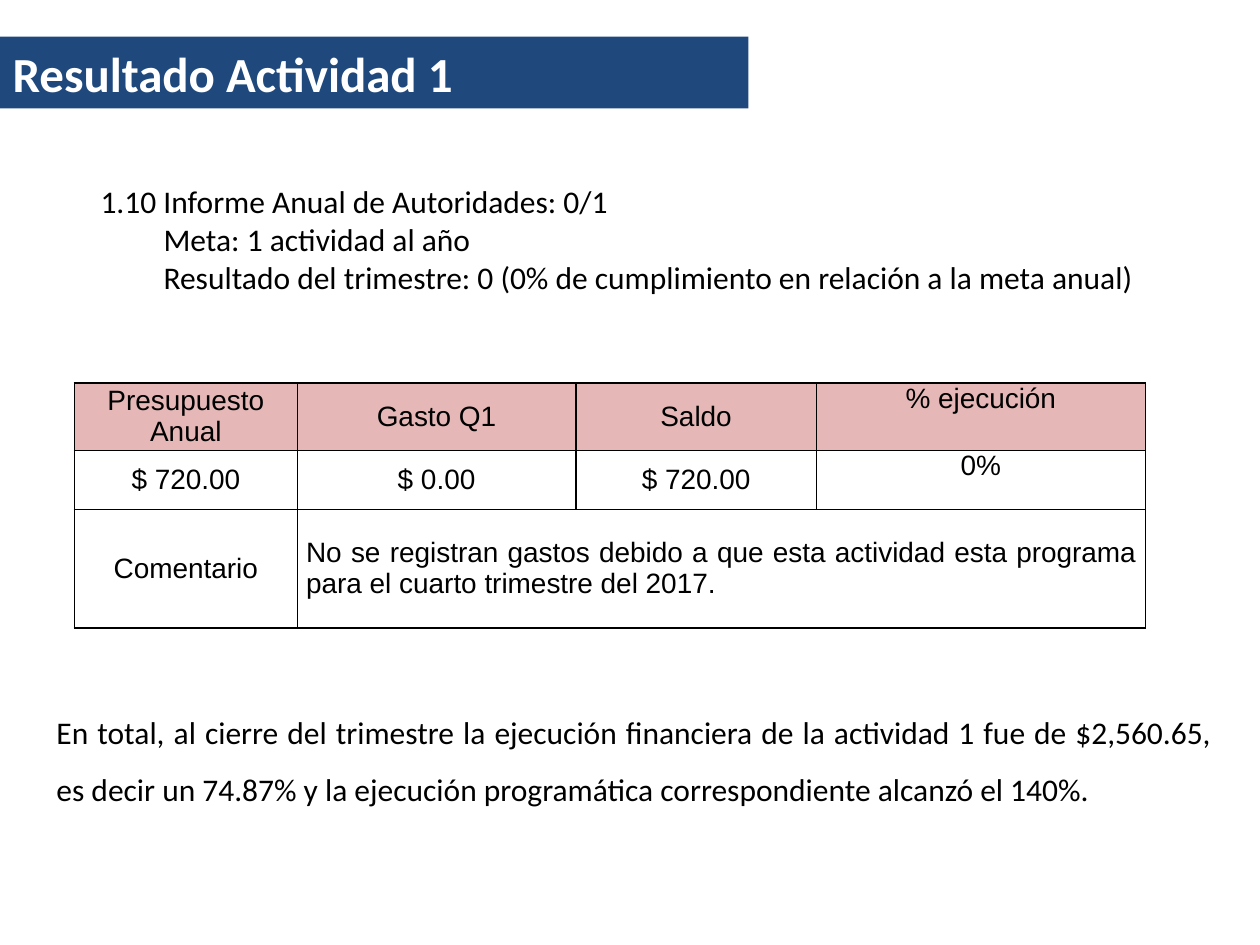
from lxml.etree import SubElement
from pptx import Presentation
from pptx.dml.color import RGBColor
from pptx.enum.text import MSO_ANCHOR as Anchor, MSO_AUTO_SIZE as AutoSize, PP_ALIGN as Align
from pptx.oxml.ns import qn
from pptx.util import Inches, Pt

COLORS = {"banner": "1F497D", "header": "E5B8B7", "ink": "000000", "paper": "FFFFFF"}


def write(frame, text, size=18, font="Calibri", color="ink", bold=False,
          align=Align.LEFT, anchor=Anchor.MIDDLE, spacing=1.0, indents=()):
    frame.word_wrap = True
    frame.vertical_anchor = anchor
    frame.text = text
    for paragraph in frame.paragraphs:
        paragraph.alignment = align
        paragraph.line_spacing = spacing
        for run in paragraph.runs:
            run.font.size = Pt(size)
            run.font.name = font
            run.font.bold = bold
            run.font.color.rgb = RGBColor.from_string(COLORS[color])
    for paragraph, indent in zip(frame.paragraphs, indents):
        properties = paragraph._p.get_or_add_pPr()
        properties.set("marL", str(Inches(indent)))
        properties.set("indent", "0")


deck = Presentation()
deck.slide_width, deck.slide_height = Inches(10), Inches(7.5)
slide = deck.slides.add_slide(deck.slide_layouts[5])

banner = slide.shapes.title
banner.left, banner.top = 0, Inches(0.29)
banner.width, banner.height = Inches(5.94), Inches(0.57)
banner.fill.solid()
banner.fill.fore_color.rgb = RGBColor.from_string(COLORS["banner"])
write(banner.text_frame, "Resultado Actividad 1", size=28, color="paper", bold=True)
banner.text_frame.auto_size = AutoSize.NONE

goal = slide.shapes.add_textbox(Inches(0.2), Inches(1.39), Inches(9.37), Inches(1.01))
write(goal.text_frame,
      "1.10 Informe Anual de Autoridades: 0/1\n"
      "Meta: 1 actividad al año\n"
      "Resultado del trimestre: 0 (0% de cumplimiento en relación a la meta anual)",
      indents=(0.5, 1, 1))

column_widths = [1.77, 2.21, 1.91, 2.61]
row_heights = [0.47, 0.47, 0.94]
budget_rows = [
    ["Presupuesto Anual", "Gasto Q1", "Saldo", "% ejecución"],
    ["$ 720.00", "$ 0.00", "$ 720.00", "0%"],
    ["Comentario", "No se registran gastos debido a que esta actividad esta programa "
     "para el cuarto trimestre del 2017.", "", ""],
]
budget = slide.shapes.add_table(
    len(row_heights), len(column_widths), Inches(0.59), Inches(3.04),
    Inches(sum(column_widths)), Inches(sum(row_heights))).table
for column, width in zip(budget.columns, column_widths):
    column.width = Inches(width)
for row, height in zip(budget.rows, row_heights):
    row.height = Inches(height)
budget.cell(2, 1).merge(budget.cell(2, 3))

for r, entries in enumerate(budget_rows):
    for c, entry in enumerate(entries):
        cell = budget.cell(r, c)
        cell.margin_left = cell.margin_right = Inches(0.07)
        cell.margin_top = cell.margin_bottom = 0
        cell.vertical_anchor = Anchor.TOP if c == 3 else Anchor.MIDDLE
        properties = cell._tc.get_or_add_tcPr()
        for edge in ("a:lnL", "a:lnR", "a:lnT", "a:lnB"):
            border = SubElement(properties, qn(edge), w=str(Pt(1)))
            SubElement(SubElement(border, qn("a:solidFill")), qn("a:srgbClr"), val=COLORS["ink"])
        if r == 0:
            cell.fill.solid()
            cell.fill.fore_color.rgb = RGBColor.from_string(COLORS["header"])
        else:
            cell.fill.background()
        if entry:
            write(cell.text_frame, entry, size=16, font="Arial", anchor=cell.vertical_anchor,
                  align=Align.JUSTIFY if cell.is_merge_origin else Align.CENTER)

summary = slide.shapes.add_textbox(Inches(0.35), Inches(5.48), Inches(9.37), Inches(0.96))
write(summary.text_frame,
      "En total, al cierre del trimestre la ejecución financiera de la actividad 1 fue de "
      "$2,560.65, es decir un 74.87% y la ejecución programática correspondiente alcanzó el 140%.",
      align=Align.JUSTIFY, spacing=1.5)

deck.save("out.pptx")
